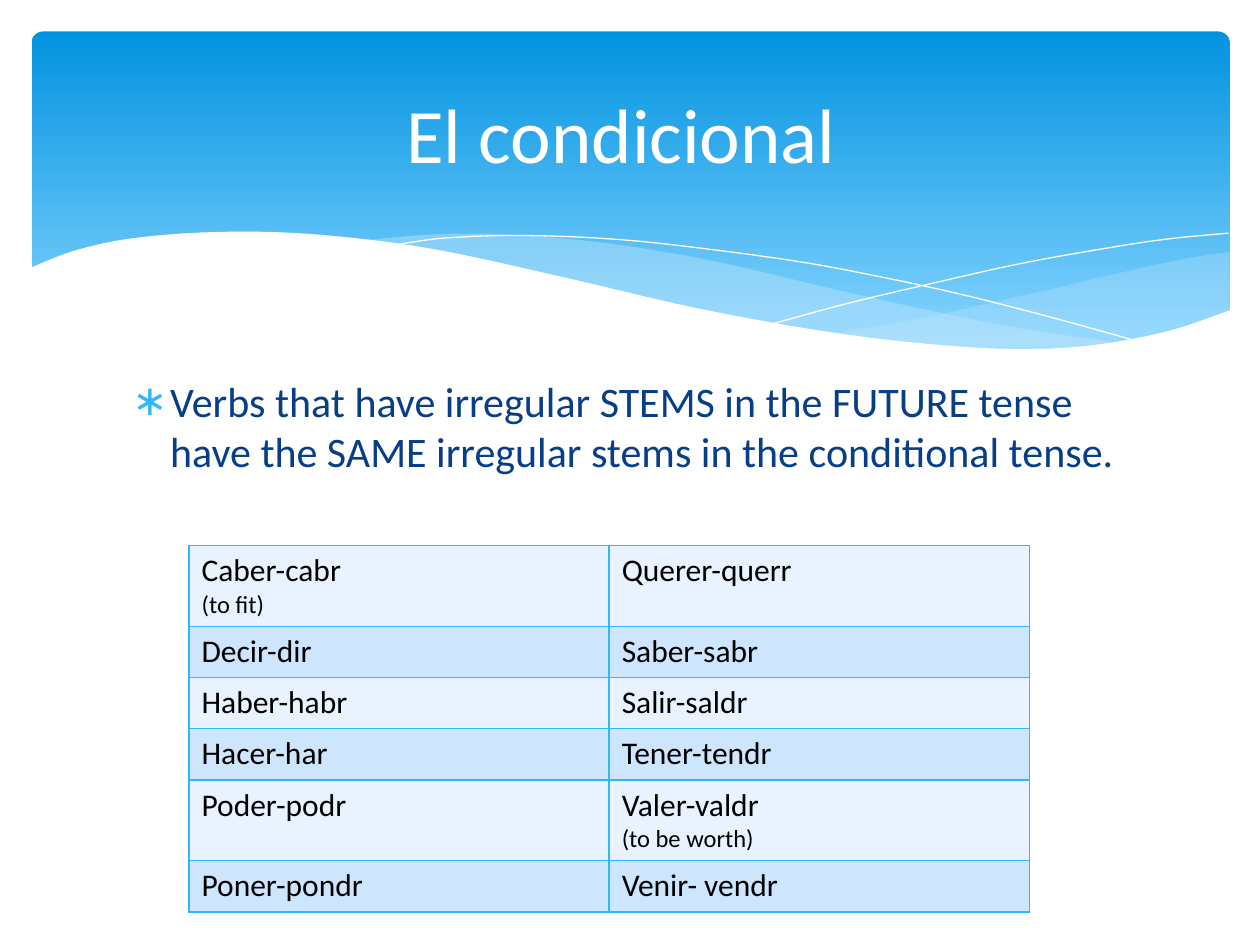
from dataclasses import dataclass

from lxml.etree import SubElement
from pptx import Presentation
from pptx.dml.color import RGBColor as RGB
from pptx.enum.shapes import MSO_SHAPE as SHAPE
from pptx.enum.text import MSO_ANCHOR as ANCHOR, MSO_AUTO_SIZE as AUTO_SIZE, PP_ALIGN as ALIGN
from pptx.oxml import parse_xml
from pptx.oxml.ns import nsdecls, qn
from pptx.util import Inches, Pt

COLUMNS, ROWS = 100, 75


@dataclass(frozen=True)
class Theme:
    font: str = "Calibri"
    sky_top: str = "0293E0"
    sky_bottom: str = "83D3FE"
    mist: str = "C6E7FC"
    white: str = "FFFFFF"
    navy: str = "073E87"
    accent: str = "31B6FD"
    black: str = "000000"
    bands: tuple = ("E8F3FF", "CEE5FE")
    title_size: int = 44
    body_size: int = 24
    verb_size: int = 18
    gloss_size: int = 14


def smooth(knots, steps=8):
    """Points of a cubic Hermite curve through knots that run from left to right."""
    def slope(i):
        (x0, y0), (x1, y1) = knots[max(i - 1, 0)], knots[min(i + 1, len(knots) - 1)]
        return (y1 - y0) / (x1 - x0)

    curve = [knots[0]]
    for i, ((x0, y0), (x1, y1)) in enumerate(zip(knots, knots[1:])):
        run = x1 - x0
        for step in range(1, steps + 1):
            t = step / steps
            y = (y0 * (1 + 2 * t) * (1 - t) ** 2 + y1 * t * t * (3 - 2 * t)
                 + run * t * (1 - t) * (slope(i) * (1 - t) - slope(i + 1) * t))
            curve.append((x0 + run * t, y))
    return curve


def write_text(frame, lines, *, font, color, align=ALIGN.LEFT, before=0):
    """Fill a text frame with (text, size) lines, one paragraph each."""
    for i, (text, size) in enumerate(lines):
        paragraph = frame.add_paragraph() if i else frame.paragraphs[0]
        paragraph.alignment = align
        paragraph.space_before = Pt(before)
        run = paragraph.add_run()
        run.text = text
        run.font.name, run.font.size = font, Pt(size)
        run.font.color.rgb = RGB.from_string(color)


class LessonSlide:
    def __init__(self, deck, theme):
        self.theme = theme
        self.column = deck.slide_width / COLUMNS
        self.row = deck.slide_height / ROWS
        self.slide = deck.slides.add_slide(deck.slide_layouts[1])
        self.shapes = self.slide.shapes

    def place(self, x, y, width, height):
        return (round(x * self.column), round(y * self.row),
                round(width * self.column), round(height * self.row))

    def banner(self, *box):
        sky = self.shapes.add_shape(SHAPE.ROUNDED_RECTANGLE, *self.place(*box))
        sky.adjustments[0] = 0.034
        sky.shadow.inherit = False
        sky.line.fill.background()
        sky.fill.gradient()
        sky.fill.gradient_angle = 270
        colors = (self.theme.sky_top, self.theme.sky_bottom)
        for stop, position, color in zip(sky.fill.gradient_stops, (0, 0.9), colors):
            stop.position = position
            stop.color.rgb = RGB.from_string(color)

    def outline(self, points, closed):
        points = [(x * self.column, y * self.row) for x, y in points]
        builder = self.shapes.build_freeform(*points[0])
        builder.add_line_segments(points[1:], close=closed)
        outline = builder.convert_to_shape()
        outline.shadow.inherit = False
        return outline

    def wave(self, crest, base, color, opacity=100):
        wave = self.outline(smooth(crest) + smooth(base)[::-1], closed=True)
        wave.line.fill.background()
        wave.fill.solid()
        wave.fill.fore_color.rgb = RGB.from_string(color)
        if opacity < 100:
            rgb = wave.fill._xPr.find(".//" + qn("a:srgbClr"))
            SubElement(rgb, qn("a:alpha"), val=str(opacity * 1000))

    def ripple(self, knots):
        ripple = self.outline(smooth(knots), closed=False)
        ripple.fill.background()
        ripple.line.width = 0
        ripple.line.color.rgb = RGB.from_string(self.theme.white)

    def placeholder(self, index, box, anchor):
        """Move a template placeholder to its box, in front of the artwork."""
        holder = self.slide.placeholders[index]
        holder.left, holder.top, holder.width, holder.height = self.place(*box)
        holder._element.getparent().append(holder._element)
        frame = holder.text_frame
        frame.word_wrap, frame.auto_size = True, AUTO_SIZE.NONE
        frame.vertical_anchor = anchor
        return frame

    def title(self, text, *box):
        frame = self.placeholder(0, box, ANCHOR.MIDDLE)
        write_text(frame, [(text, self.theme.title_size)], font=self.theme.font,
                   color=self.theme.white, align=ALIGN.CENTER)

    def bullets(self, items, *box):
        theme = self.theme
        frame = self.placeholder(1, box, ANCHOR.TOP)
        write_text(frame, [(item, theme.body_size) for item in items],
                   font=theme.font, color=theme.navy, before=5)
        for paragraph in frame.paragraphs:
            format_ = paragraph._p.get_or_add_pPr()
            format_.set("marL", str(Inches(0.3)))
            format_.set("indent", str(Inches(-0.3)))
            color = SubElement(format_, qn("a:buClr"))
            SubElement(color, qn("a:srgbClr"), val=theme.accent)
            SubElement(format_, qn("a:buFont"), typeface=theme.font)
            SubElement(format_, qn("a:buChar"), char="∗")

    def verb_table(self, verbs, *box):
        theme = self.theme
        table = self.shapes.add_table(len(verbs), len(verbs[0]), *self.place(*box)).table
        table.first_row = table.horz_banding = False
        for r, pair in enumerate(verbs):
            for c, (verb, *glosses) in enumerate(pair):
                cell = table.cell(r, c)
                self.borders(cell)
                cell.fill.solid()
                cell.fill.fore_color.rgb = RGB.from_string(theme.bands[r % 2])
                lines = [(verb, theme.verb_size)] + [(g, theme.gloss_size) for g in glosses]
                write_text(cell.text_frame, lines, font=theme.font, color=theme.black)

    def borders(self, cell):
        for side in "LRTB":
            cell._tc.get_or_add_tcPr().append(parse_xml(
                f'<a:ln{side} {nsdecls("a")} w="{Pt(1)}"><a:solidFill>'
                f'<a:srgbClr val="{self.theme.accent}"/></a:solidFill></a:ln{side}>'))


RIGHT_CREST = [(66.1, 26.5), (72.9, 25.3), (77.9, 24.2), (83.2, 23), (89.1, 21.6),
               (94.8, 20.4), (97.6, 20)]
RIGHT_BASE = [(66.1, 26.5), (70.5, 27.1), (75.7, 27.6), (80.3, 27.8), (84.4, 27.7),
              (88.9, 27.2), (93.5, 26.2), (97.6, 24.7)]
MIDDLE_CREST = [(28.6, 19.1), (34.4, 18.6), (39.9, 18.6), (46.5, 19.1), (52.8, 20),
                (58.4, 21.1), (66.8, 23.1), (74.1, 24.7), (80.7, 26), (89.3, 27.3)]
MIDDLE_BASE = [(28.6, 19.1), (36.2, 20.3), (44.9, 22.2), (53, 24), (60.1, 25.5),
               (66.5, 26.6), (72.2, 27.4), (78.5, 27.8), (83.8, 27.8), (89.3, 27.3)]
FALLING = [(30.9, 19.5), (35.3, 18.9), (41.6, 18.7), (48.9, 19), (55.6, 19.7),
           (63.6, 20.8), (69.5, 21.9), (76, 23.3), (83.1, 25.1), (90.7, 27.2)]
RISING = [(61.3, 25.7), (67.2, 24.1), (74.8, 22.3), (80.6, 21), (86.6, 19.9),
          (92.4, 19), (97.5, 18.5)]
FRONT_CREST = [(2.3, 21.3), (5.9, 19.9), (10.6, 18.9), (17.7, 18.4), (25, 18.6),
               (34, 19.7), (44.7, 22), (55.5, 24.5), (66.8, 26.5), (76.1, 27.5),
               (82.3, 27.7), (87.5, 27.3), (93, 26.2), (97.7, 24.6)]
FRONT_BASE = [(2.3, 32.9), (97.7, 32.9)]

VERBS = [
    (("Caber-cabr", "(to fit)"), ("Querer-querr",)),
    (("Decir-dir",), ("Saber-sabr",)),
    (("Haber-habr",), ("Salir-saldr",)),
    (("Hacer-har",), ("Tener-tendr",)),
    (("Poder-podr",), ("Valer-valdr", "(to be worth)")),
    (("Poner-pondr",), ("Venir- vendr",)),
]


def main():
    deck = Presentation()
    deck.slide_width, deck.slide_height = Inches(10), Inches(7.5)
    theme = Theme()
    lesson = LessonSlide(deck, theme)
    lesson.banner(2.5, 2.5, 95.1, 27)
    lesson.wave(RIGHT_CREST, RIGHT_BASE, theme.mist, opacity=29)
    lesson.wave(MIDDLE_CREST, MIDDLE_BASE, theme.mist, opacity=40)
    lesson.ripple(FALLING)
    lesson.ripple(RISING)
    lesson.wave(FRONT_CREST, FRONT_BASE, theme.white)
    lesson.bullets(["Verbs that have irregular STEMS in the FUTURE tense "
                    "have the SAME irregular stems in the conditional tense."],
                   9.5, 29.3, 81, 37.7)
    lesson.title("El condicional ", 5, 3.7, 90, 13.7)
    lesson.verb_table(VERBS, 15, 43.3, 66.7, 24.3)
    deck.save("out.pptx")


if __name__ == "__main__":
    main()
